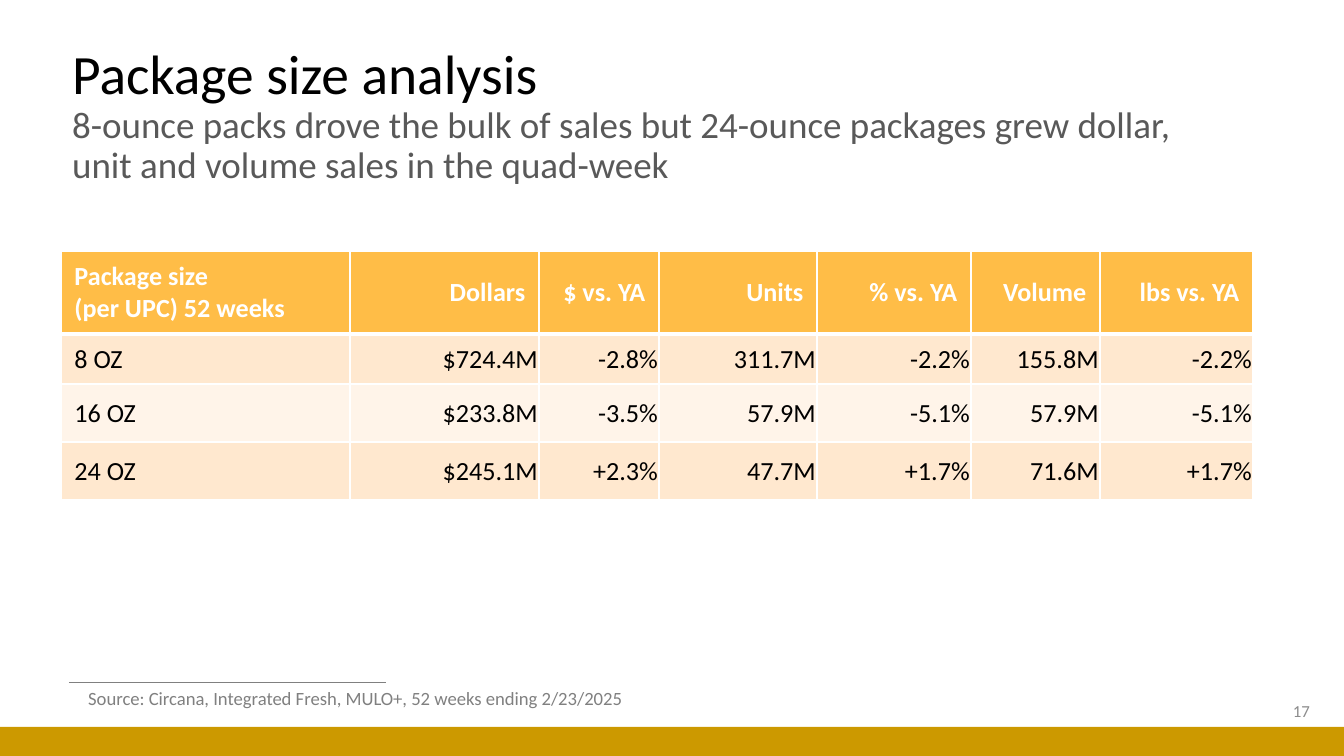
import dataclasses
import typing

import pptx
import pptx.dml.color
import pptx.enum.shapes
import pptx.enum.text
import pptx.oxml
import pptx.oxml.ns
import pptx.util

SCALE = 9144000 / 1344
ALIGN = pptx.enum.text.PP_ALIGN
ANCHOR = pptx.enum.text.MSO_ANCHOR


@dataclasses.dataclass(frozen=True)
class Theme:
    font: str = "Calibri"
    ink: str = "000000"
    muted: str = "595959"
    note: str = "808080"
    page: str = "8C8C8C"
    white: str = "FFFFFF"
    bar: str = "CC9900"
    head: str = "FFBD47"
    bands: tuple[str, ...] = ("FFE8CF", "FFF4E9")
    title_size: float = 29.7
    sub_size: float = 19.8
    cell_size: float = 14
    note_size: float = 10
    page_size: float = 9


@dataclasses.dataclass(frozen=True)
class Style:
    size: float
    color: str
    bold: bool = False


@dataclasses.dataclass(frozen=True)
class Label:
    text: str
    box: tuple[int, int, int, int]
    styles: tuple[Style, ...]
    anchor: typing.Any = ANCHOR.MIDDLE
    align: typing.Any = ALIGN.LEFT
    wrap: bool = True
    lead: float = 1.0


THEME = Theme()

LABELS = (
    Label(
        "Package size analysis\v8-ounce packs drove the bulk of sales but 24-ounce "
        "packages grew dollar, unit and volume sales in the quad-week",
        (59, 46, 1146, 142),
        (Style(THEME.title_size, THEME.ink), Style(THEME.sub_size, THEME.muted)),
        lead=0.9,
    ),
    Label("17", (1021, 691, 302, 40), (Style(THEME.page_size, THEME.page),),
          align=ALIGN.RIGHT),
    Label("Source: Circana, Integrated Fresh, MULO+, 52 weeks ending 2/23/2025",
          (75, 680, 573, 36), (Style(THEME.note_size, THEME.note),),
          anchor=ANCHOR.TOP, wrap=False),
)

COLS = (289, 189, 120, 158, 154, 129, 153)
ROWS = (83, 50, 58, 58)
DATA = (
    ("Package size\v(per UPC) 52 weeks", "Dollars", "$ vs. YA", "Units",
     "% vs. YA", "Volume", "lbs vs. YA"),
    ("8 OZ", "$724.4M", "-2.8%", "311.7M", "-2.2%", "155.8M", "-2.2%"),
    ("16 OZ", "$233.8M", "-3.5%", "57.9M", "-5.1%", "57.9M", "-5.1%"),
    ("24 OZ", "$245.1M", "+2.3%", "47.7M", "+1.7%", "71.6M", "+1.7%"),
)


def px(count: int) -> int:
    return round(count * SCALE)


def rgb(code: str) -> pptx.dml.color.RGBColor:
    return pptx.dml.color.RGBColor.from_string(code)


def paint(part: typing.Any, code: str) -> None:
    part.fill.solid()
    part.fill.fore_color.rgb = rgb(code)


def write(frame: typing.Any, text: str, styles: tuple[Style, ...],
          align: typing.Any) -> None:
    para = frame.paragraphs[0]
    para.text = text
    para.alignment = align
    for spot, run in enumerate(para.runs):
        style = styles[min(spot, len(styles) - 1)]
        run.font.name = THEME.font
        run.font.size = pptx.util.Pt(style.size)
        run.font.bold = style.bold
        run.font.color.rgb = rgb(style.color)


def add_label(slide: typing.Any, label: Label) -> None:
    frame = slide.shapes.add_textbox(*map(px, label.box)).text_frame
    frame.word_wrap = label.wrap
    frame.vertical_anchor = label.anchor
    write(frame, label.text, label.styles, label.align)
    frame.paragraphs[0].line_spacing = label.lead


def add_edges(cell: typing.Any, widths: dict[str, int]) -> None:
    props = cell._tc.get_or_add_tcPr()
    for side, width in widths.items():
        props.append(pptx.oxml.parse_xml(
            f'<a:ln{side} {pptx.oxml.ns.nsdecls("a")} w="{pptx.util.Pt(width)}">'
            f'<a:solidFill><a:srgbClr val="{THEME.white}"/></a:solidFill></a:ln{side}>'
        ))


def add_grid(slide: typing.Any) -> None:
    table = slide.shapes.add_table(
        len(ROWS), len(COLS), px(61), px(251), px(sum(COLS)), px(sum(ROWS))).table
    table.horz_banding = False
    for col, width in zip(table.columns, COLS):
        col.width = px(width)
    for row, height in zip(table.rows, ROWS):
        row.height = px(height)
    for r, line in enumerate(DATA):
        head = r == 0
        color = THEME.white if head else THEME.ink
        back = THEME.head if head else THEME.bands[(r - 1) % 2]
        for c, text in enumerate(line):
            cell = table.cell(r, c)
            add_edges(cell, {"L": 1, "R": 1, "T": 3 if r == 1 else 1,
                             "B": 3 if head else 1})
            paint(cell, back)
            cell.vertical_anchor = ANCHOR.MIDDLE
            if not head:
                cell.margin_top, cell.margin_bottom = px(1), 0
                if c:
                    cell.margin_left = cell.margin_right = px(1)
            write(cell.text_frame, text, (Style(THEME.cell_size, color, head),),
                  ALIGN.RIGHT if c else ALIGN.LEFT)


def add_foot(slide: typing.Any) -> None:
    rule = slide.shapes.add_connector(
        pptx.enum.shapes.MSO_CONNECTOR.STRAIGHT, px(69), px(683), px(386), px(683))
    rule.line.color.rgb = rgb(THEME.note)
    rule.line.width = pptx.util.Pt(0.5)
    rule._element.spPr.append(
        pptx.oxml.parse_xml(f'<a:effectLst {pptx.oxml.ns.nsdecls("a")}/>'))
    bar = slide.shapes.add_shape(
        pptx.enum.shapes.MSO_SHAPE.RECTANGLE, 0, px(727), px(1344), px(29))
    bar.shadow.inherit = False
    paint(bar, THEME.bar)
    bar.line.fill.background()


def main() -> None:
    deck = pptx.Presentation()
    deck.slide_width, deck.slide_height = px(1344), px(756)
    slide = deck.slides.add_slide(deck.slide_layouts[6])
    add_foot(slide)
    for label in LABELS:
        add_label(slide, label)
    add_grid(slide)
    deck.save("out.pptx")


if __name__ == "__main__":
    main()
